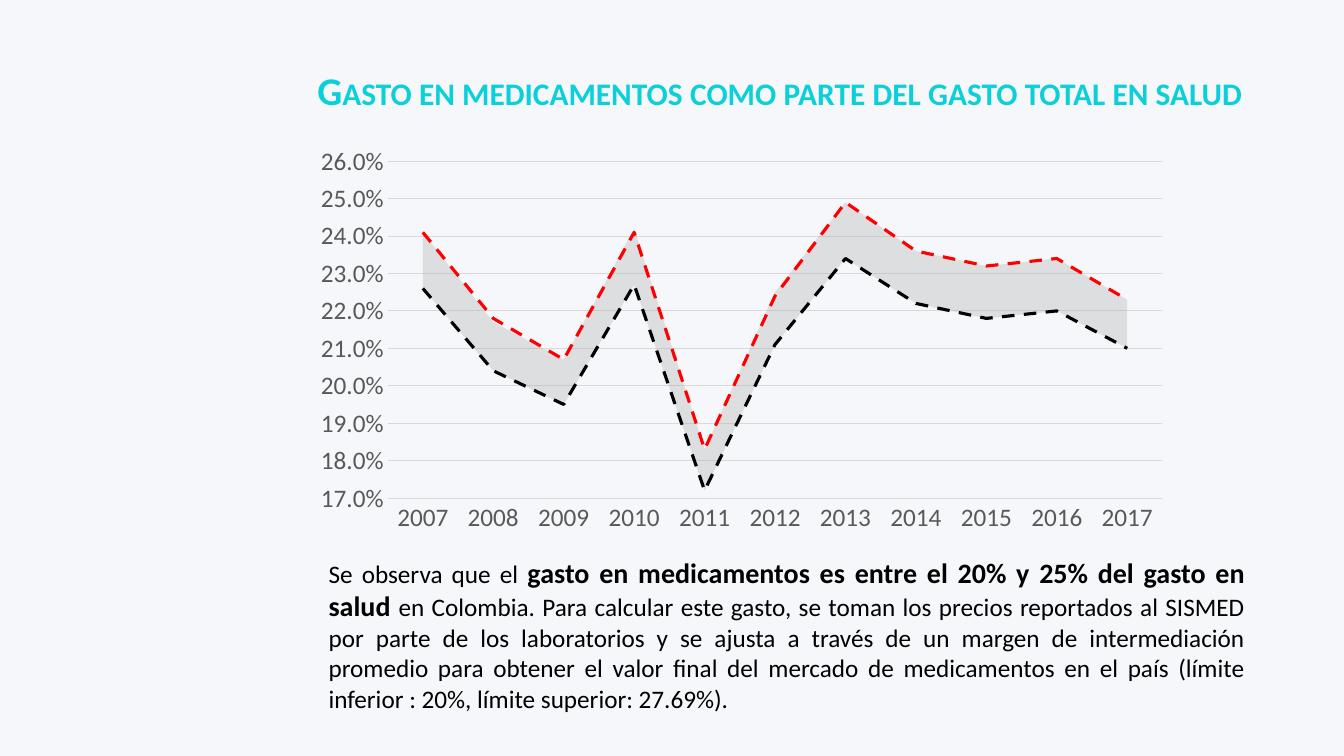
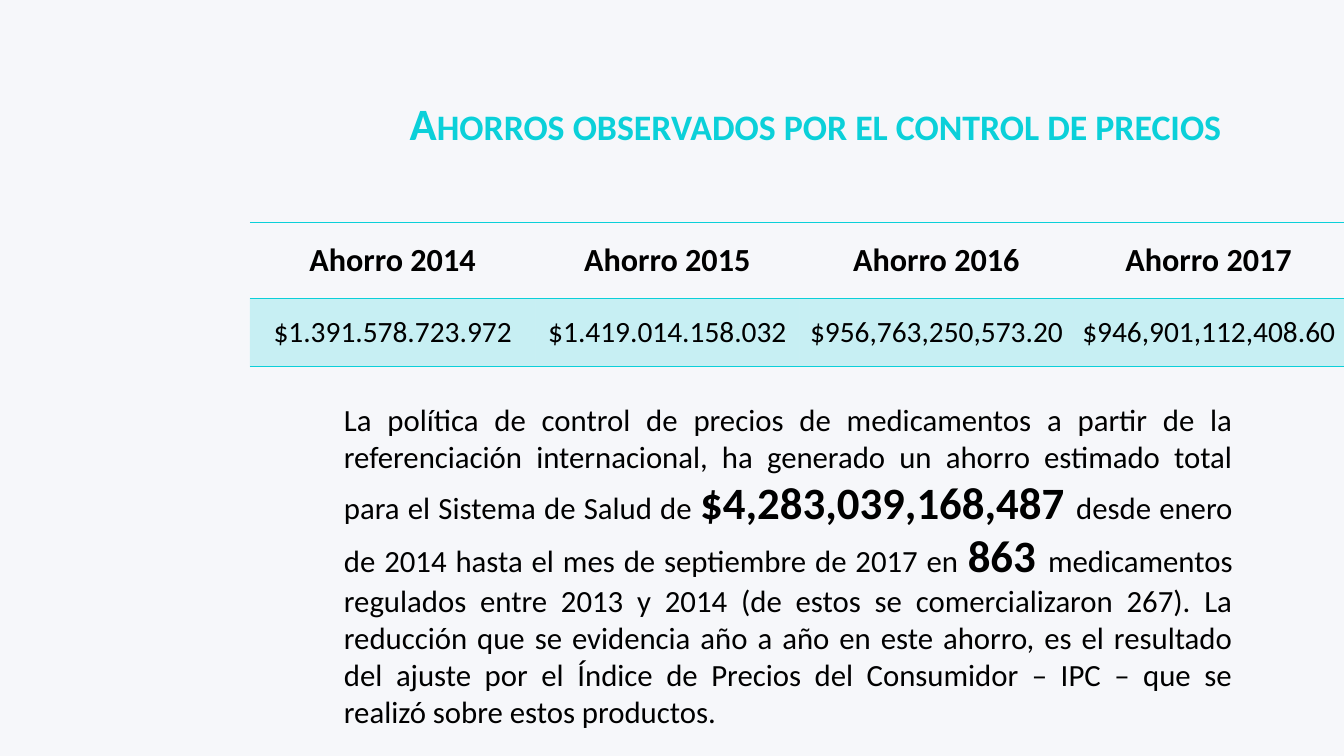
from lxml import etree
from pptx import Presentation
from pptx.chart.data import CategoryChartData
from pptx.dml.color import RGBColor
from pptx.enum.chart import XL_CHART_TYPE as ChartType, XL_MARKER_STYLE as Marker, XL_TICK_MARK as Tick
from pptx.enum.dml import MSO_LINE as Dash
from pptx.enum.text import MSO_ANCHOR as Anchor, PP_ALIGN as Align
from pptx.oxml import parse_xml
from pptx.oxml.ns import nsdecls, qn
from pptx.util import Pt

FONT = "Calibri"
PAPER, TURQUOISE, BLACK = "F6F7FA", "0BD0D9", "000000"
RED, GRAY, GRID, AXIS_TEXT = "FF0000", "A6A6A6", "D9D9D9", "595959"
NO_TABLE_STYLE = "{2D5ABB26-0587-4C30-8999-92F81FD0307C}"

YEARS = [str(year) for year in range(2007, 2018)]
LOWER = [0.226, 0.204, 0.195, 0.227, 0.172, 0.211, 0.234, 0.222, 0.218, 0.22, 0.21]
MARGIN = [0.015, 0.013, 0.012, 0.015, 0.011, 0.014, 0.015, 0.014, 0.014, 0.014, 0.013]
UPPER = [0.241, 0.218, 0.207, 0.241, 0.183, 0.224, 0.249, 0.236, 0.232, 0.234, 0.223]

SPENDING_TEXT = [
    ("Se observa que el ", 18, False),
    ("gasto en medicamentos es entre el 20% y 25% del gasto en salud ", 20, True),
    ("en Colombia. Para calcular este gasto, se toman los precios reportados al SISMED "
     "por parte de los laboratorios y se ajusta a través de un margen de intermediación "
     "promedio para obtener el valor final del mercado de medicamentos en el país "
     "(límite inferior : 20%, límite superior: 27.69%).", 18, False),
]
SAVINGS = [
    ("Ahorro 2014", "$1.391.578.723.972", 204),
    ("Ahorro 2015", "$1.419.014.158.032", 188.5),
    ("Ahorro 2016", "$956,763,250,573.20", 196),
    ("Ahorro 2017", "$946,901,112,408.60", 193),
]
SAVINGS_TEXT = [
    ("La política de control de precios de medicamentos a partir de la referenciación "
     "internacional, ha generado un ahorro estimado total para el Sistema de Salud de ", 22, False),
    ("$4,283,039,168,487 ", 32, True),
    ("desde enero de 2014 hasta el mes de septiembre de 2017 en ", 22, False),
    ("863 ", 32, True),
    ("medicamentos regulados entre 2013 y 2014 (de estos se comercializaron 267). "
     "La reducción que se evidencia año a año en este ahorro, es el resultado del ajuste "
     "por el Índice de Precios del Consumidor – IPC – que se realizó sobre estos "
     "productos.", 22, False),
]


def color(value):
    return RGBColor.from_string(value)


def style_font(font, size, value, bold=False):
    font.name = FONT
    font.size = Pt(size)
    font.bold = bold
    font.color.rgb = color(value)


def fill_solid(fill, value, opacity=100):
    fill.solid()
    fill.fore_color.rgb = color(value)
    if opacity < 100:
        tint = fill._xPr.find(qn("a:solidFill"))[0]
        etree.SubElement(tint, qn("a:alpha")).set("val", str(opacity * 1000))


def style_line(line, value, width):
    line.color.rgb = color(value)
    line.width = Pt(width)


def add_page(deck):
    page = deck.slides.add_slide(deck.slide_layouts[6])
    fill_solid(page.background.fill, PAPER)
    return page


def add_text(page, area, spans, align, value):
    box = page.shapes.add_textbox(*map(Pt, area))
    frame = box.text_frame
    frame.word_wrap = True
    frame.vertical_anchor = Anchor.MIDDLE
    para = frame.paragraphs[0]
    para.alignment = align
    for text, size, bold in spans:
        span = para.add_run()
        span.text = text
        style_font(span.font, size, value, bold)
    return box


def add_title(page, area, text, size):
    box = add_text(page, area, [(text, size, True)], Align.CENTER, TURQUOISE)
    box.text_frame.paragraphs[0].runs[0].font._element.set("cap", "small")


def add_body(page, area, spans):
    box = add_text(page, area, spans, Align.JUSTIFY, BLACK)
    box.text_frame.margin_left = Pt(25.2)


def move_to_lines(chart, count):
    area_plot = chart.plots[0]._element
    line_plot = parse_xml(
        f'<c:lineChart {nsdecls("c")}><c:grouping val="standard"/>'
        '<c:varyColors val="0"/></c:lineChart>')
    for series in area_plot.findall(qn("c:ser"))[-count:]:
        line_plot.append(series)
    etree.SubElement(line_plot, qn("c:marker")).set("val", "1")
    for axis in area_plot.findall(qn("c:axId")):
        etree.SubElement(line_plot, qn("c:axId")).set("val", axis.get("val"))
    area_plot.addnext(line_plot)


def set_plot_box(chart, left, top, width, height):
    plot_area = chart._chartSpace.chart.plotArea
    for layout in plot_area.findall(qn("c:layout")):
        plot_area.remove(layout)
    plot_area.insert(0, parse_xml(
        f'<c:layout {nsdecls("c")}><c:manualLayout><c:layoutTarget val="inner"/>'
        '<c:xMode val="edge"/><c:yMode val="edge"/>'
        f'<c:x val="{left}"/><c:y val="{top}"/><c:w val="{width}"/><c:h val="{height}"/>'
        '</c:manualLayout></c:layout>'))
    plot_area.find(qn("c:valAx")).find(qn("c:crossBetween")).set("val", "between")


def style_axes(chart):
    years, shares = chart.category_axis, chart.value_axis
    for axis in (years, shares):
        axis.major_tick_mark = axis.minor_tick_mark = Tick.NONE
        style_font(axis.tick_labels.font, 18, AXIS_TEXT)
    years.has_major_gridlines = False
    style_line(years.format.line, GRID, 0.75)
    shares.minimum_scale, shares.maximum_scale, shares.major_unit = 0.17, 0.26, 0.01
    shares.tick_labels.number_format = "0.0%"
    shares.tick_labels.number_format_is_linked = False
    shares.has_major_gridlines = True
    style_line(shares.major_gridlines.format.line, GRID, 0.75)
    shares.format.line.fill.background()


def add_spending_chart(page, area):
    data = CategoryChartData(number_format="0.0%")
    data.categories = YEARS
    for name, values in (("Base", LOWER), ("Margen", MARGIN),
                         ("Límite inferior", LOWER), ("Límite superior", UPPER)):
        data.add_series(name, values)
    chart = page.shapes.add_chart(ChartType.AREA_STACKED, *map(Pt, area), data).chart
    chart.has_legend = chart.has_title = False
    style_font(chart.font, 18, BLACK)
    style_axes(chart)
    move_to_lines(chart, 2)
    set_plot_box(chart, 0.1, 0.06, 0.88, 0.84)

    bands, limits = chart.plots
    bands.vary_by_categories = False
    base, margin = bands.series
    base.format.fill.background()
    fill_solid(margin.format.fill, GRAY, 30)
    for band in (base, margin):
        band.format.line.fill.background()
    for limit, value in zip(limits.series, (BLACK, RED)):
        style_line(limit.format.line, value, 2.25)
        limit.format.line.dash_style = Dash.DASH
        limit.marker.style = Marker.NONE
        limit.smooth = False


def rule_cell(cell):
    for position, side in enumerate(("lnT", "lnB")):
        cell._tc.get_or_add_tcPr().insert(position, parse_xml(
            f'<a:{side} {nsdecls("a")} w="12700"><a:solidFill>'
            f'<a:srgbClr val="{TURQUOISE}"/></a:solidFill></a:{side}>'))


def fill_cell(cell, text, size, bold):
    cell.text_frame.text = text
    cell.vertical_anchor = Anchor.MIDDLE
    cell.margin_left = cell.margin_right = Pt(5)
    cell.margin_top = cell.margin_bottom = 0
    para = cell.text_frame.paragraphs[0]
    para.alignment = Align.CENTER
    style_font(para.runs[0].font, size, BLACK, bold)


def add_savings_table(page, left, top):
    heights = (54, 49)
    width = sum(column[2] for column in SAVINGS)
    frame = page.shapes.add_table(
        2, len(SAVINGS), Pt(left), Pt(top), Pt(width), Pt(sum(heights)))
    table = frame.table
    table.first_row = table.horz_banding = False
    table._tbl.tblPr.find(qn("a:tableStyleId")).text = NO_TABLE_STYLE
    for row, height in zip(table.rows, heights):
        row.height = Pt(height)
    for index, (heading, amount, column_width) in enumerate(SAVINGS):
        table.columns[index].width = Pt(column_width)
        header, value = table.cell(0, index), table.cell(1, index)
        fill_cell(header, heading, 23, True)
        fill_cell(value, amount, 21, False)
        header.fill.background()
        fill_solid(value.fill, TURQUOISE, 20)
        rule_cell(header)
        rule_cell(value)


def build_spending_page(deck):
    page = add_page(deck)
    add_title(page, (204.5, 30, 705, 68),
              "Gasto en medicamentos como parte del gasto total en salud", 28)
    add_body(page, (209.5, 402.5, 687, 101), SPENDING_TEXT)
    add_spending_chart(page, (214, 98, 629, 286.5))


def build_savings_page(deck):
    page = add_page(deck)
    add_title(page, (205, 53.5, 755, 68),
              "Ahorros observados por el control de precios", 32)
    add_savings_table(page, 178.5, 159)
    add_body(page, (220.5, 333.5, 667, 140), SAVINGS_TEXT)


def main():
    deck = Presentation()
    deck.slide_width, deck.slide_height = Pt(960), Pt(540)
    build_spending_page(deck)
    build_savings_page(deck)
    deck.save("out.pptx")


if __name__ == "__main__":
    main()
